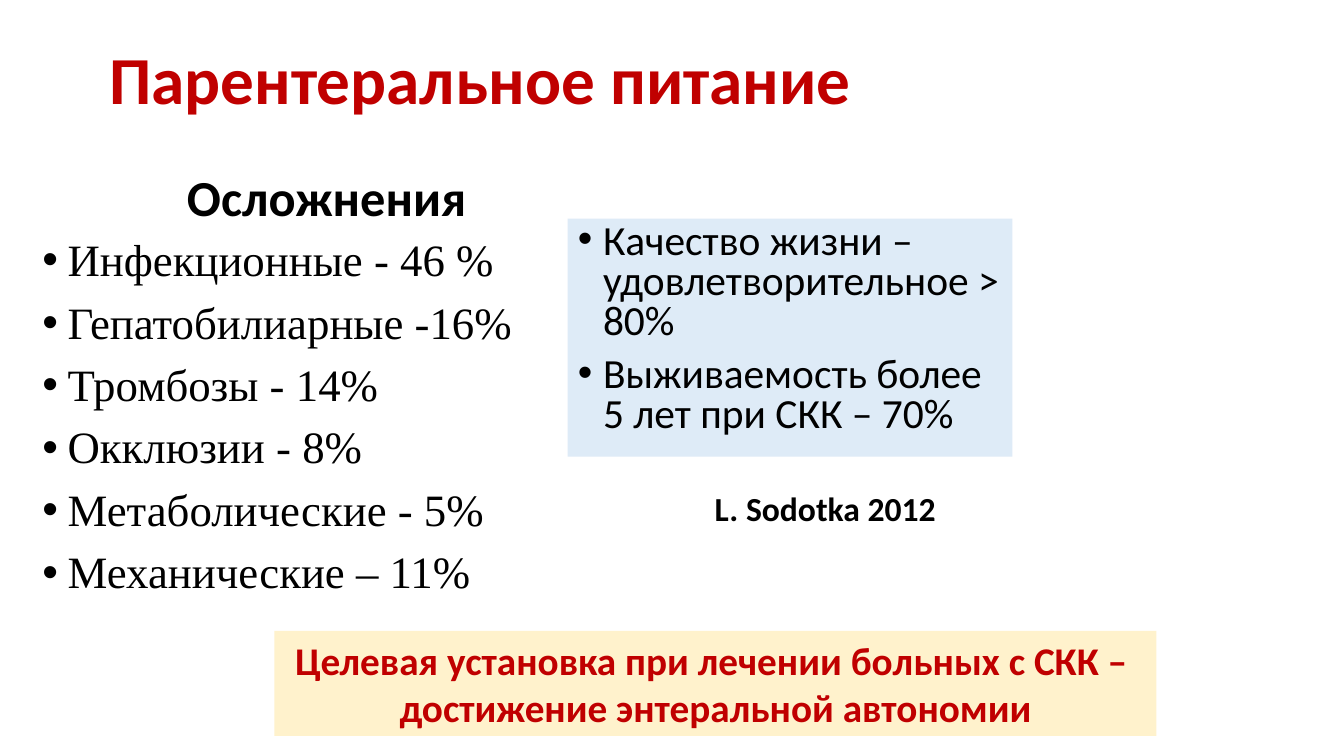
from pptx import Presentation
from pptx.dml.color import RGBColor
from pptx.enum.shapes import MSO_SHAPE
from pptx.enum.text import MSO_ANCHOR, MSO_AUTO_SIZE, PP_ALIGN
from pptx.oxml.ns import qn
from pptx.util import Inches, Pt

SLIDE_WIDTH = Inches(13.33)
SLIDE_HEIGHT = Inches(7.5)
RED = "C00000"
BLACK = "000000"
LIGHT_BLUE = "DEEBF7"
CREAM = "FFF2CC"

COMPLICATIONS = [
    "Инфекционные - 46 %",
    "Гепатобилиарные -16%",
    "Тромбозы - 14%",
    "Окклюзии - 8%",
    "Метаболические - 5%",
    "Механические – 11%",
]
OUTCOMES = [
    "Качество жизни – удовлетворительное > 80%",
    "Выживаемость более 5 лет при СКК – 70%",
]
GOAL = [
    "Целевая установка при лечении больных с СКК – ",
    "достижение энтеральной автономии",
]


def color(hex_value):
    return RGBColor.from_string(hex_value)


def area(left, top, width, height):
    return (
        int(SLIDE_WIDTH * left / 100),
        int(SLIDE_HEIGHT * top / 100),
        int(SLIDE_WIDTH * width / 100),
        int(SLIDE_HEIGHT * height / 100),
    )


def place(shape, box):
    shape.left, shape.top, shape.width, shape.height = box


def fill(shape, hex_value):
    shape.fill.solid()
    shape.fill.fore_color.rgb = color(hex_value)


def write(shape, lines, size, hex_value=BLACK, font="Calibri", bold=True,
          align=PP_ALIGN.CENTER, anchor=MSO_ANCHOR.TOP, spacing=1.0, before=0):
    frame = shape.text_frame
    frame.text = "\n".join(lines)
    frame.word_wrap = True
    frame.auto_size = MSO_AUTO_SIZE.NONE
    frame.vertical_anchor = anchor
    for paragraph in frame.paragraphs:
        paragraph.alignment = align
        paragraph.line_spacing = spacing
        paragraph.space_before = Pt(before)
        paragraph.font.name = font
        paragraph.font.size = Pt(size)
        paragraph.font.bold = bold
        paragraph.font.color.rgb = color(hex_value)


def add_bullets(shape):
    for paragraph in shape.text_frame.paragraphs:
        properties = paragraph._p.get_or_add_pPr()
        properties.set("marL", str(Inches(0.25)))
        properties.set("indent", str(-Inches(0.25)))
        bullet_font = properties.makeelement(qn("a:buFont"), {"typeface": "Arial"})
        bullet = properties.makeelement(qn("a:buChar"), {"char": "•"})
        properties.insert_element_before(bullet_font, "a:tabLst", "a:defRPr", "a:extLst")
        properties.insert_element_before(bullet, "a:tabLst", "a:defRPr", "a:extLst")


def write_list(shape, box, lines, size, font, spacing):
    place(shape, box)
    write(shape, lines, size, font=font, bold=False, align=PP_ALIGN.LEFT,
          spacing=spacing, before=10)
    add_bullets(shape)


def add_author(slide, box, name):
    author = slide.shapes.add_textbox(*box)
    write(author, [name], 24, align=PP_ALIGN.RIGHT)


def add_banner(slide, box, lines):
    banner = slide.shapes.add_shape(MSO_SHAPE.RECTANGLE, *box)
    banner.shadow.inherit = False
    banner.line.fill.background()
    fill(banner, CREAM)
    write(banner, lines, 28, RED)


def main():
    presentation = Presentation()
    presentation.slide_width = SLIDE_WIDTH
    presentation.slide_height = SLIDE_HEIGHT
    slide = presentation.slides.add_slide(presentation.slide_layouts[4])
    title, heading, complications, spare, outcomes = slide.placeholders
    spare.element.getparent().remove(spare.element)

    place(title, area(4.8, 1.33, 61.89, 19.33))
    write(title, ["Парентеральное питание"], 48, RED,
          anchor=MSO_ANCHOR.MIDDLE, spacing=0.9)
    place(heading, area(3.15, 18.8, 42.31, 12))
    write(heading, ["Осложнения"], 36, anchor=MSO_ANCHOR.BOTTOM,
          spacing=0.9, before=10)
    write_list(complications, area(2.4, 30.8, 42.31, 53.73), COMPLICATIONS,
               32, "Times New Roman", 0.9)
    write_list(outcomes, area(42.24, 28.93, 33.08, 31.47), OUTCOMES,
               29.6, "Calibri", 0.8)
    fill(outcomes, LIGHT_BLUE)
    add_author(slide, area(48.99, 63.87, 21.38, 6.67), "L. Sodotka 2012")
    add_banner(slide, area(20.41, 83.47, 65.64, 13.87), GOAL)
    presentation.save("out.pptx")


if __name__ == "__main__":
    main()
